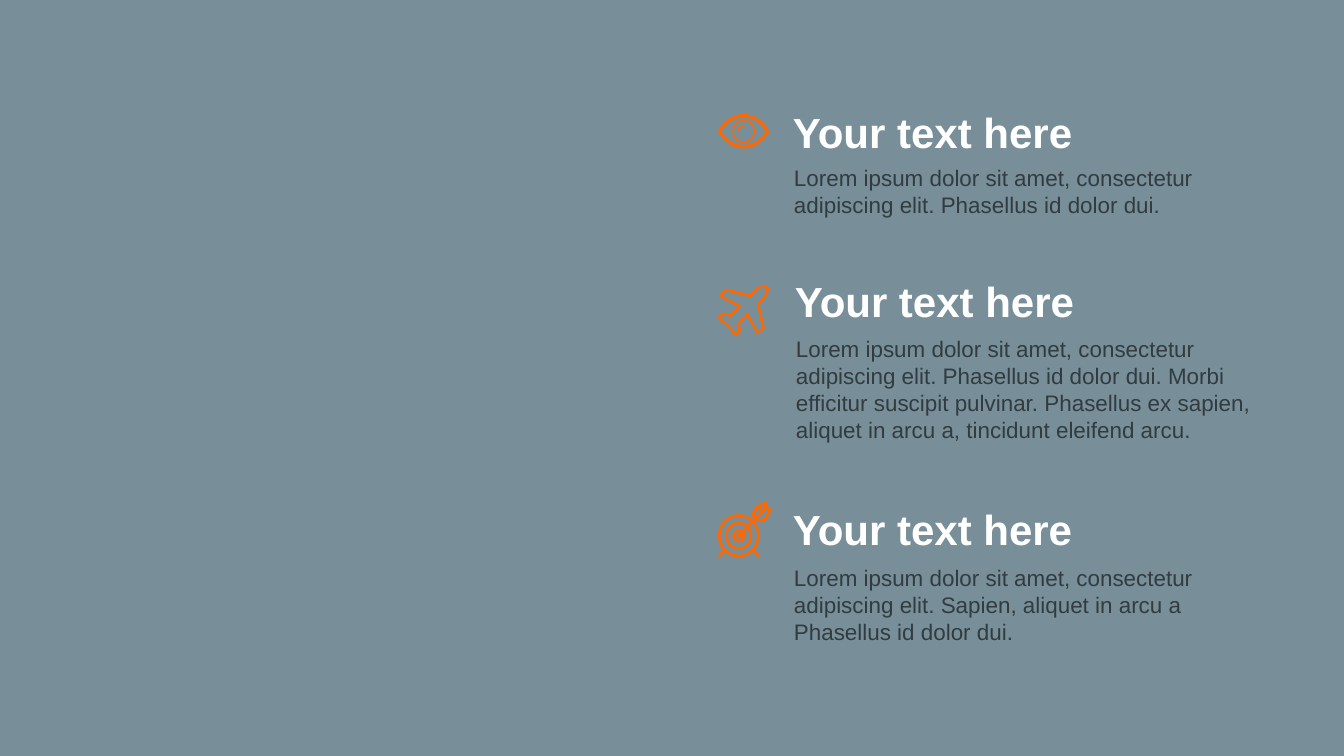
"""Build a slide with three icon-led text blocks on the right-hand side."""
from math import cos, radians, sin

from pptx import Presentation
from pptx import util as u
from pptx.dml.color import RGBColor
from pptx.enum import shapes, text
from pptx.oxml import xmlchemy as xml
from pptx.oxml import ns

SLATE = RGBColor(0x78, 0x8E, 0x99)
ORANGE = RGBColor(0xFF, 0x68, 0x00)
WHITE = RGBColor(0xFF, 0xFF, 0xFF)
DARK = RGBColor(0x31, 0x3C, 0x41)

LEFT = 1025.3
TITLE = "Your text here"
BLOCKS = [
    (1125.4, 148.3, 632.9, 230.4, 667.4, 85,
     "Lorem ipsum dolor sit amet, consectetur adipiscing elit. Phasellus id dolor dui."),
    (1128.2, 389.5, 681.8, 475.2, 664.6, 162.7,
     "Lorem ipsum dolor sit amet, consectetur adipiscing elit. Phasellus id dolor dui. "
     "Morbi efficitur suscipit pulvinar. Phasellus ex sapien, aliquet in arcu a, "
     "tincidunt eleifend arcu."),
    (1125.4, 716.4, 585.4, 802.1, 667.4, 123.8,
     "Lorem ipsum dolor sit amet, consectetur adipiscing elit. Sapien, aliquet in arcu a "
     "Phasellus id dolor dui."),
]
PLANE = [
    [(25, 72.7), (22.3, 71.3), (13.7, 59), (1.4, 50.4), (0, 47.5), (0.7, 45.4),
     (5.8, 40.3), (8.6, 39.6), (17.3, 41.8), (28, 31), (5, 18.7), (2.9, 16.5),
     (3.6, 13), (10, 6.5), (13.7, 5.8), (45.4, 13.7), (52.6, 6.5), (59.4, 2),
     (66.2, 0), (71.3, 2.2), (73.4, 5.5), (72, 10.8), (67, 20.2), (59, 27.4),
     (67, 60.5), (65.5, 64), (59, 69.1), (56.9, 69.8), (54, 67.7), (41.8, 44.6),
     (31, 55.4), (33.1, 64), (32.4, 67), (28, 72)],
    [(3.6, 47.5), (15.8, 56.9), (25.2, 69.1), (29.5, 64.8), (27.4, 54.7),
     (42.5, 38.9), (56.9, 66.2), (63.4, 61.9), (55.4, 26.6), (64, 18), (69.1, 10),
     (68.4, 4.3), (66.2, 3.6), (60, 5.2), (55.4, 9.4), (46.8, 18), (12.2, 9.4),
     (6.5, 15.8), (33.8, 30.2), (18.7, 46.1), (7.9, 43.2)],
]
FLIGHT = [
    [(67, 0), (69, 0), (70, 2), (70, 8), (75.5, 8), (77, 9.5), (73, 21), (67, 28),
     (61, 29.5), (57, 28), (52.5, 25), (49, 21), (49, 15), (54, 7)],
    [(66, 5), (59, 9), (52.5, 16), (55.5, 23), (61, 26), (67, 22), (72.7, 11.5),
     (67.7, 11.5), (66, 9.5)],
]


class Deck:
    """Hold the style, the slide and the shape tree being drawn into."""

    def __init__(self, slide):
        self.slide = slide
        self.home = slide.shapes
        self.font = "Arial"

    def group(self):
        self.home = self.slide.shapes.add_group_shape().shapes

    def ungroup(self):
        self.home = self.slide.shapes

    def paint(self, shape):
        shape.shadow.inherit = False
        shape.fill.solid()
        shape.fill.fore_color.rgb = ORANGE
        shape.line.fill.background()

    def label(self, words, left, top, width, height, size, color, bold=False):
        box = self.home.add_textbox(u.Pt(left), u.Pt(top), u.Pt(width), u.Pt(height))
        frame = box.text_frame
        frame.word_wrap = True
        frame.auto_size = text.MSO_AUTO_SIZE.SHAPE_TO_FIT_TEXT
        frame.text = words
        font = frame.paragraphs[0].runs[0].font
        font.name, font.size, font.bold = self.font, u.Pt(size), bold
        font.color.rgb = color

    def ring(self, mid, width, height, thick):
        x, y = mid
        ring = self.home.add_shape(
            shapes.MSO_SHAPE.DONUT, u.Pt(x - width / 2), u.Pt(y - height / 2),
            u.Pt(width), u.Pt(height))
        ring.adjustments[0] = thick / min(width, height)
        self.paint(ring)

    def outline(self, loops, left, top):
        loops = [[(u.Pt(left + x), u.Pt(top + y)) for x, y in loop] for loop in loops]
        pen = self.home.build_freeform(*loops[0][0])
        for loop in loops:
            if loop is not loops[0]:
                pen.move_to(*loop[0])
            pen.add_line_segments(loop[1:], close=True)
        self.paint(pen.convert_to_shape())

    def bar(self, start, end, left, top):
        ends = [u.Pt(v) for x, y in (start, end) for v in (left + x, top + y)]
        bar = self.home.add_connector(shapes.MSO_CONNECTOR.STRAIGHT, *ends)
        bar.line.color.rgb = ORANGE
        bar.line.width = u.Pt(3.8)
        props = bar._element.spPr
        props.find(ns.qn("a:ln")).set("cap", "rnd")
        props.append(xml.OxmlElement("a:effectLst"))


def lens(wide, high, steps=12):
    """Return the points of an almond with the given half sizes."""
    arc = []
    for i in range(steps + 1):
        t = i / steps
        s = 1 - t
        arc.append((wide * (s**3 + 2.4 * s * s * t + 1.26 * s * t * t),
                    high * (1.74 * s * s * t + 3 * s * t * t + t**3)))
    half = arc + [(-x, y) for x, y in arc[-2::-1]]
    return half + [(x, -y) for x, y in half[-2:0:-1]]


def gleam(outer, inner):
    """Return the points of a curved band over the upper left quarter."""
    turns = [radians(a) for a in range(170, 281, 10)]
    return ([(outer * cos(a), outer * sin(a)) for a in turns]
            + [(inner * cos(a), inner * sin(a)) for a in reversed(turns)])


def eye(deck):
    mid = (1062, 187.5)
    deck.group()
    deck.outline([lens(36.7, 24.6), lens(31.7, 19.8)], *mid)
    deck.outline([gleam(8.8, 6.6)], *mid)
    deck.ring(mid, 32.4, 33.8, 2.2)
    deck.ungroup()


def target(deck):
    top = 716.4
    deck.group()
    for start, end in [((29.8, 49), (68, 9.7)), ((60.1, 5.5), (60.1, 17.5)),
                       ((2.1, 77.8), (10.1, 69.1)), ((57.6, 77.8), (49.6, 69.1))]:
        deck.bar(start, end, LEFT, top)
    deck.outline(FLIGHT, LEFT, top)
    for width, height, thick in [(59.8, 61.9, 3.8), (38.9, 40.3, 3.8),
                                 (18.7, 19.4, 4.2), (6.5, 6.5, 2.6)]:
        deck.ring((1055.1, 765.4), width, height, thick)
    deck.ungroup()


def main():
    show = Presentation()
    show.slide_width, show.slide_height = u.Pt(1919.52), u.Pt(1080)
    slide = show.slides.add_slide(show.slide_layouts[6])
    slide.background.fill.solid()
    slide.background.fill.fore_color.rgb = SLATE
    deck = Deck(slide)
    for left, top, width, low, span, height, words in BLOCKS:
        deck.label(TITLE, left, top, width, 80, 60, WHITE, True)
        deck.label(words, left + 1.44, low, span, height, 32, DARK)
    eye(deck)
    deck.outline(PLANE, LEFT, 406.8)
    target(deck)
    show.save("out.pptx")


if __name__ == "__main__":
    main()
